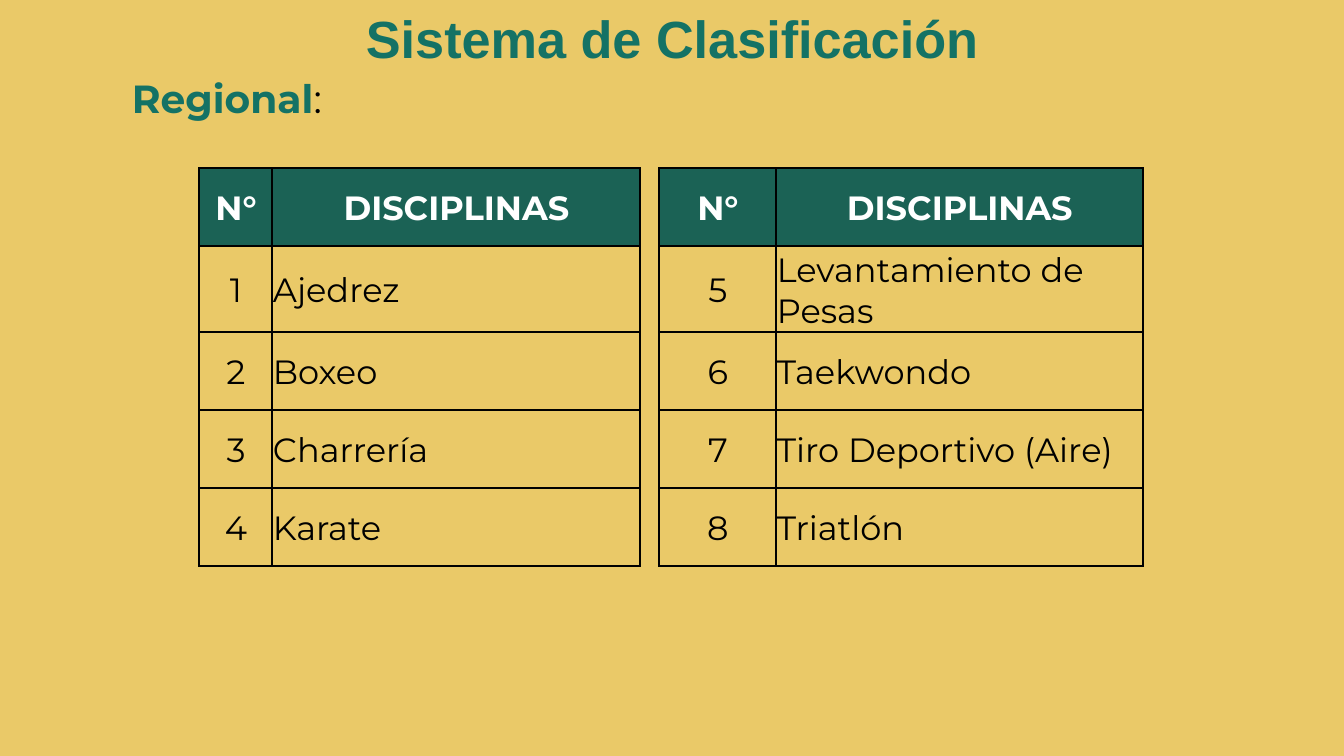
from dataclasses import dataclass

from lxml.etree import SubElement
from pptx import Presentation
from pptx.dml.color import RGBColor
from pptx.enum.text import MSO_ANCHOR, PP_ALIGN
from pptx.oxml.ns import qn
from pptx.util import Pt

EMU_PER_PX = 9144000 / 1344


def px(length):
    return round(length * EMU_PER_PX)


@dataclass(frozen=True)
class Theme:
    background: str = "EAC968"
    accent: str = "147265"
    header_fill: str = "1B6255"
    header_text: str = "FFFFFF"
    ink: str = "000000"
    title_font: str = "Arial"
    body_font: str = "Montserrat"
    title_size: int = 28
    subtitle_size: int = 21
    table_size: int = 18
    border: int = 1


class SlideBuilder:
    def __init__(self, slide, theme):
        self.slide = slide
        self.theme = theme
        fill = slide.background.fill
        fill.solid()
        fill.fore_color.rgb = RGBColor.from_string(theme.background)

    def style(self, font, name, size, color, bold):
        font.name = name
        font.size = Pt(size)
        font.bold = bold
        font.color.rgb = RGBColor.from_string(color)

    def text_box(self, left, top, width, height, insets):
        """Add an empty wrapping box; insets are horizontal and vertical."""
        box = self.slide.shapes.add_textbox(px(left), px(top), px(width), px(height))
        frame = box.text_frame
        frame.word_wrap = True
        frame.margin_left = frame.margin_right = px(insets[0])
        frame.margin_top = frame.margin_bottom = px(insets[1])
        return frame

    def title(self, text):
        theme = self.theme
        frame = self.text_box(0, 14, 1344, 47, (10, 5))
        frame.vertical_anchor = MSO_ANCHOR.MIDDLE
        paragraph = frame.paragraphs[0]
        paragraph.text = text
        paragraph.alignment = PP_ALIGN.CENTER
        self.style(paragraph.font, theme.title_font, theme.title_size, theme.accent, True)

    def subtitle(self, label, ending):
        theme = self.theme
        paragraph = self.text_box(119, 67, 1208, 61, (13, 7)).paragraphs[0]
        paragraph.alignment = PP_ALIGN.JUSTIFY
        for text, color, bold in ((label, theme.accent, True), (ending, theme.ink, False)):
            run = paragraph.add_run()
            run.text = text
            self.style(run.font, theme.body_font, theme.subtitle_size, color, bold)

    def borders(self, cell, visible):
        """Draw the edges named in visible (L, R, T, B) and clear the others."""
        properties = cell._tc.get_or_add_tcPr()
        for edge in "LRTB":
            line = SubElement(properties, qn(f"a:ln{edge}"), w=str(Pt(self.theme.border)))
            if edge in visible:
                fill = SubElement(line, qn("a:solidFill"))
                SubElement(fill, qn("a:srgbClr"), val=self.theme.ink)
            else:
                SubElement(line, qn("a:noFill"))

    def cell(self, cell, text, header, centered):
        theme = self.theme
        self.borders(cell, "LRTB" if text else "LR")
        if header and text:
            cell.fill.solid()
            cell.fill.fore_color.rgb = RGBColor.from_string(theme.header_fill)
        else:
            cell.fill.background()
        cell.vertical_anchor = MSO_ANCHOR.MIDDLE
        cell.margin_left, cell.margin_right = px(1), 0
        cell.margin_top, cell.margin_bottom = px(4), px(1)
        paragraph = cell.text_frame.paragraphs[0]
        paragraph.text = text
        paragraph.alignment = PP_ALIGN.CENTER if centered else PP_ALIGN.LEFT
        color = theme.header_text if header else theme.ink
        self.style(paragraph.font, theme.body_font, theme.table_size, color, header)

    def table(self, left, top, widths, heights, rows):
        table = self.slide.shapes.add_table(
            len(heights), len(widths), px(left), px(top), px(sum(widths)), px(sum(heights))
        ).table
        table.first_row = table.horz_banding = False
        for column, width in zip(table.columns, widths):
            column.width = px(width)
        for row, height in zip(table.rows, heights):
            row.height = px(height)
        for row_index, row in enumerate(rows):
            header = row_index == 0
            for column_index, text in enumerate(row):
                centered = header or text.isdigit()
                self.cell(table.cell(row_index, column_index), text, header, centered)


def main():
    presentation = Presentation()
    presentation.slide_width = px(1344)
    presentation.slide_height = px(756)
    slide = presentation.slides.add_slide(presentation.slide_layouts[6])
    builder = SlideBuilder(slide, Theme())

    builder.title("Sistema de Clasificación")
    builder.subtitle("Regional", ":")

    disciplines = [
        "Ajedrez", "Boxeo", "Charrería", "Karate",
        "Levantamiento de Pesas", "Taekwondo", "Tiro Deportivo (Aire)", "Triatlón",
    ]
    half = len(disciplines) // 2
    rows = [["N°", "DISCIPLINAS", "", "N°", "DISCIPLINAS"]]
    for index in range(half):
        other = index + half
        rows.append([str(index + 1), disciplines[index], "", str(other + 1), disciplines[other]])
    builder.table(199, 168, [73, 368, 19, 117, 367], [78, 86, 78, 78, 78], rows)

    presentation.save("out.pptx")


if __name__ == "__main__":
    main()
